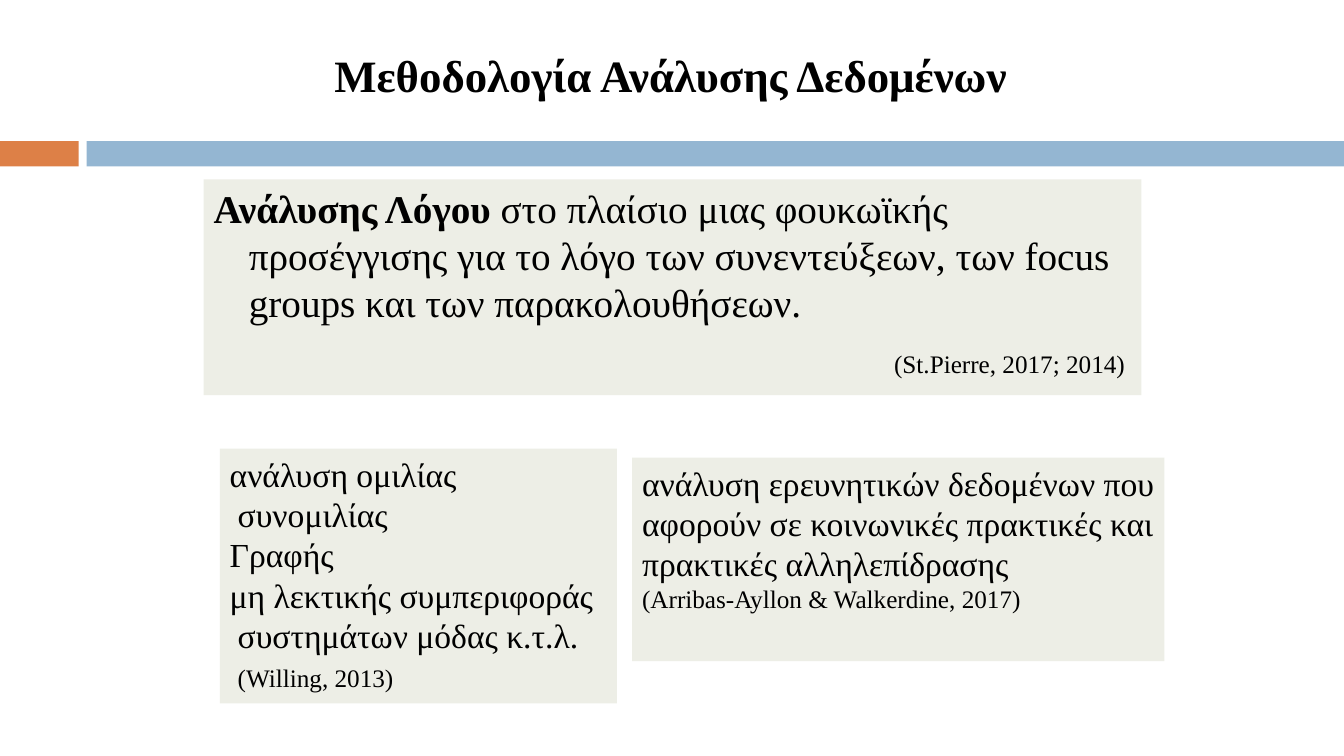
from dataclasses import dataclass

from pptx import Presentation
from pptx.dml.color import RGBColor
from pptx.enum.shapes import MSO_SHAPE as Preset
from pptx.enum.text import MSO_ANCHOR as Anchor, MSO_AUTO_SIZE as AutoSize, PP_ALIGN as Align
from pptx.slide import Slide
from pptx.text.text import TextFrame
from pptx.util import Inches, Pt

FONT = "Times New Roman"
PANEL_FILL = "EDEEE6"


@dataclass(frozen=True)
class Box:
    left: float
    top: float
    width: float
    height: float


@dataclass(frozen=True)
class Line:
    text: str
    size: int
    lead: str = ""
    align: Align = Align.LEFT
    margin: float = 0
    hanging: float = 0
    before: float = 0


@dataclass(frozen=True)
class Panel:
    box: Box
    lines: tuple[Line, ...]


BANDS = ((Box(0, 1.4, 0.78, 0.25), "DD8047"), (Box(0.86, 1.4, 12.47, 0.25), "94B6D2"))
TITLE_BOX = Box(2.25, 0.2, 8.92, 1.08)
TITLE = Line("", 32, lead="Μεθοδολογία Ανάλυσης Δεδομένων ", align=Align.CENTER)

PANELS = (
    Panel(Box(2.02, 1.78, 9.3, 2.14), (
        Line("στο πλαίσιο μιας φουκωϊκής προσέγγισης για το λόγο των συνεντεύξεων, "
             "των focus groups και των παρακολουθήσεων.",
             28, lead="Ανάλυσης Λόγου ", margin=0.35, hanging=0.35, before=7),
        Line("(St.Pierre, 2017; 2014) ", 18, align=Align.RIGHT, before=16),
    )),
    Panel(Box(2.18, 4.45, 3.94, 2.53), (
        Line("ανάλυση ομιλίας", 24),
        Line("συνομιλίας", 24, margin=0.08),
        Line("Γραφής", 24),
        Line("μη λεκτικής συμπεριφοράς", 24),
        Line("συστημάτων μόδας κ.τ.λ.", 24, margin=0.08),
        Line("(Willing, 2013)", 18, align=Align.JUSTIFY, margin=0.08, before=5.5),
    )),
    Panel(Box(6.27, 4.54, 5.28, 2.02), (
        Line("ανάλυση ερευνητικών δεδομένων που αφορούν σε κοινωνικές "
             "πρακτικές και πρακτικές αλληλεπίδρασης", 24),
        Line("(Arribas-Ayllon & Walkerdine, 2017)", 18),
    )),
)


def colour(value: str) -> RGBColor:
    """Turn a hex string into a colour."""
    return RGBColor.from_string(value)


def write_lines(frame: TextFrame, lines: tuple[Line, ...]) -> None:
    """Fill a text frame, with each line's lead in bold."""
    frame.text = "\n".join(line.lead for line in lines)
    for paragraph, line in zip(frame.paragraphs, lines):
        if line.text:
            paragraph.add_run().text = line.text
        paragraph.alignment = line.align
        paragraph.space_before = Pt(line.before)
        properties = paragraph._p.get_or_add_pPr()
        properties.set("marL", str(Inches(line.margin)))
        properties.set("indent", str(-Inches(line.hanging)))
        for run in paragraph.runs:
            run.font.name = FONT
            run.font.size = Pt(line.size)
            run.font.bold = run.text == line.lead
            run.font.color.rgb = colour("000000")


def add_block(slide: Slide, box: Box, fill: str) -> TextFrame:
    """Add a plain filled rectangle and return its text frame."""
    block = slide.shapes.add_shape(
        Preset.RECTANGLE, Inches(box.left), Inches(box.top), Inches(box.width), Inches(box.height))
    block.shadow.inherit = False
    block.fill.solid()
    block.fill.fore_color.rgb = colour(fill)
    block.line.fill.background()
    return block.text_frame


def add_panel(slide: Slide, panel: Panel) -> None:
    """Add a shaded panel with its lines of text."""
    frame = add_block(slide, panel.box, PANEL_FILL)
    frame.word_wrap = True
    frame.vertical_anchor = Anchor.TOP
    frame.auto_size = AutoSize.NONE
    write_lines(frame, panel.lines)


def place_title(slide: Slide) -> None:
    """Position and format the slide title."""
    title = slide.shapes.title
    title.left, title.top = Inches(TITLE_BOX.left), Inches(TITLE_BOX.top)
    title.width, title.height = Inches(TITLE_BOX.width), Inches(TITLE_BOX.height)
    title.text_frame.vertical_anchor = Anchor.MIDDLE
    write_lines(title.text_frame, (TITLE,))


def main() -> None:
    """Build and save the slide."""
    deck = Presentation()
    deck.slide_width, deck.slide_height = Inches(13.33), Inches(7.5)
    slide = deck.slides.add_slide(deck.slide_layouts[5])
    for box, fill in BANDS:
        add_block(slide, box, fill)
    place_title(slide)
    for panel in PANELS:
        add_panel(slide, panel)
    deck.save("out.pptx")


if __name__ == "__main__":
    main()
